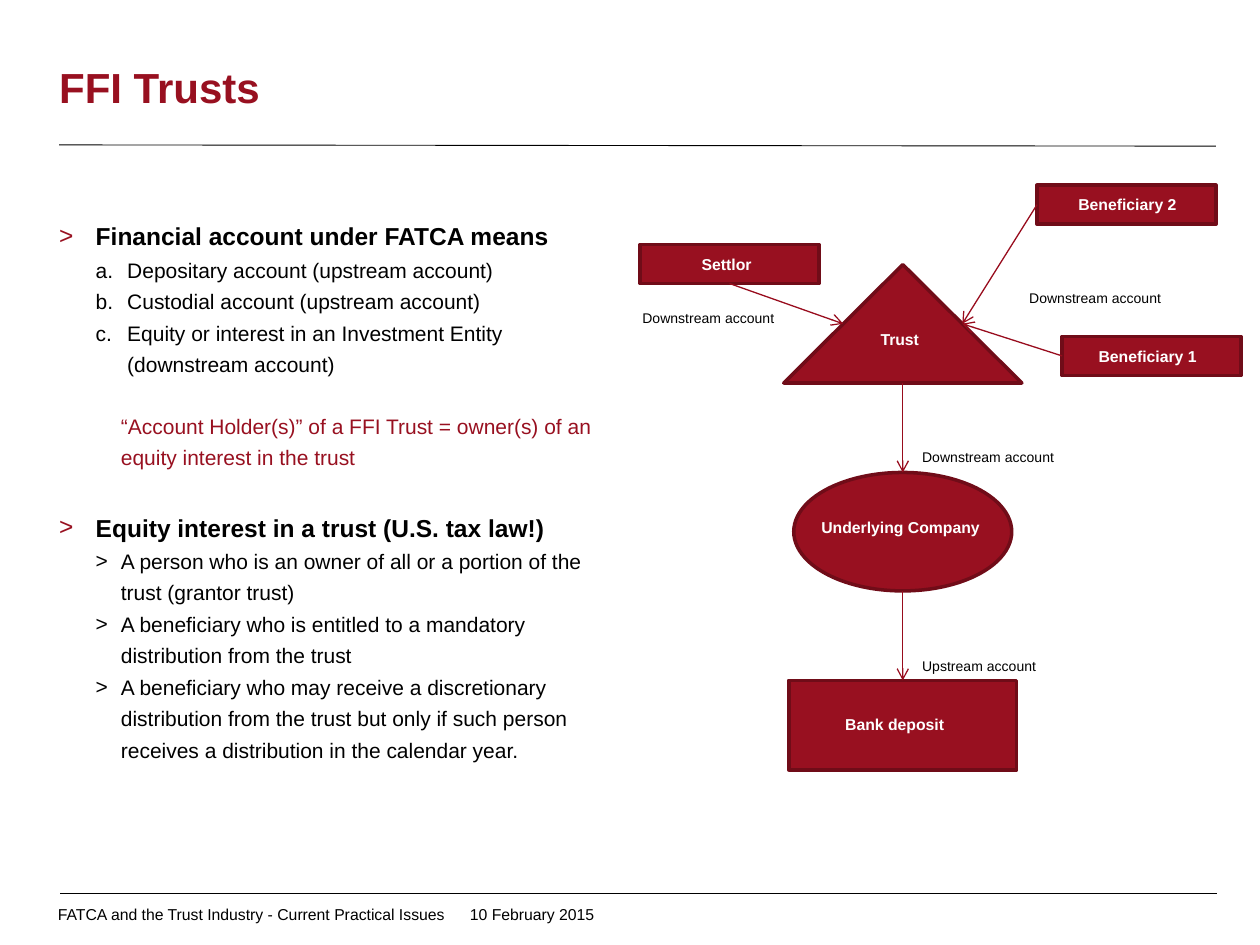
from dataclasses import dataclass

from lxml import etree
from pptx import Presentation
from pptx.dml.color import RGBColor
from pptx.enum import shapes, text
from pptx.oxml import ns
from pptx.util import Inches, Pt


@dataclass(frozen=True)
class Theme:
    font: str = "Arial"
    red: str = "981020"
    dark_red: str = "700C18"
    arrow_red: str = "980C1D"
    black: str = "000000"
    white: str = "FFFFFF"
    title: float = 24
    heading: float = 14
    body: float = 12
    small: float = 9
    label: float = 8
    line_spacing: float = 1.25


THEME = Theme()
SHAPE = shapes.MSO_SHAPE

# Body rows: style, text, space before in points
BODY = [
    ("heading", "Financial account under FATCA means", 0),
    ("letter", "Depositary account (upstream account)", 0),
    ("letter", "Custodial account (upstream account)", 0),
    ("letter", "Equity or interest in an Investment Entity (downstream account)", 0),
    ("note", "“Account Holder(s)” of a FFI Trust = owner(s) of an equity interest in the trust", 17.25),
    ("heading", "Equity interest in a trust (U.S. tax law!)", 20.1),
    ("item", "A person who is an owner of all or a portion of the trust (grantor trust)", 0),
    ("item", "A beneficiary who is entitled to a mandatory distribution from the trust", 0),
    ("item", "A beneficiary who may receive a discretionary distribution from the trust "
             "but only if such person receives a distribution in the calendar year.", 0),
]

# Style: size, colour, bold, left margin, hanging indent, bullet tag and attributes
CHARACTER = ("a:buChar", {"char": ">"})
LETTER = ("a:buAutoNum", {"type": "alphaLcPeriod"})
STYLES = {
    "heading": (THEME.heading, THEME.black, True, 0.29, 0.29, CHARACTER),
    "letter": (THEME.body, THEME.black, False, 0.54, 0.25, LETTER),
    "note": (THEME.body, THEME.red, False, 0.49, 0, None),
    "item": (THEME.body, THEME.black, False, 0.49, 0.2, CHARACTER),
}

# Nodes, relative to the diagram: preset, box, caption, caption box
NODES = {
    "company": (SHAPE.OVAL, (1.3, 2.28, 1.73, 0.94), "Underlying Company", (1.42, 2.59, 1.65)),
    "trust": (SHAPE.ISOSCELES_TRIANGLE, (1.22, 0.63, 1.89, 0.94), "Trust", (1.89, 1.1, 0.57)),
    "beneficiary 2": (SHAPE.RECTANGLE, (3.23, 0, 1.42, 0.31), "Beneficiary 2", (3.46, 0.03, 1.18)),
    "beneficiary 1": (SHAPE.RECTANGLE, (3.43, 1.2, 1.42, 0.31), "Beneficiary 1", (3.62, 1.23, 1.18)),
    "settlor": (SHAPE.RECTANGLE, (0.08, 0.47, 1.42, 0.31), "Settlor", (0.47, 0.5, 0.65)),
    "bank": (SHAPE.RECTANGLE, (1.26, 3.93, 1.81, 0.71), "Bank deposit", (1.61, 4.15, 1.14)),
}

# Arrow ends as a node and a point given in fractions of its box
BOTTOM, TOP, LEFT = (0.5, 1), (0.5, 0), (0, 0.5)
LEFT_SLOPE, RIGHT_SLOPE = (0.25, 0.5), (0.75, 0.5)
ARROWS = [
    ("beneficiary 1", LEFT, "trust", RIGHT_SLOPE),
    ("settlor", BOTTOM, "trust", LEFT_SLOPE),
    ("beneficiary 2", LEFT, "trust", RIGHT_SLOPE),
    ("trust", BOTTOM, "company", TOP),
    ("company", BOTTOM, "bank", TOP),
]

# Arrow labels, relative to the diagram: text, box
LABELS = [
    ("Upstream account", (2.22, 3.7, 1.32)),
    ("Downstream account", (2.22, 2.04, 1.32)),
    ("Downstream account", (3.07, 0.78, 1.73)),
    ("Downstream account", (0, 0.94, 1.73)),
]


def set_all(target, values):
    for name, value in values.items():
        setattr(target, name, value)


def set_font(paragraph, size, color, bold=False):
    set_all(paragraph.font, {"name": THEME.font, "size": Pt(size), "bold": bold})
    paragraph.font.color.rgb = RGBColor.from_string(color)


def add_text(slide, box, content, size, color, bold=False, **frame_format):
    frame = slide.shapes.add_textbox(*map(Inches, box)).text_frame
    set_all(frame, {"word_wrap": True, **frame_format})
    paragraph = frame.paragraphs[0]
    paragraph.text = content
    set_font(paragraph, size, color, bold)
    return frame


def add_line(slide, start, end, color, width, arrow=False):
    line = slide.shapes.add_connector(
        shapes.MSO_CONNECTOR.STRAIGHT, *map(Inches, (*start, *end)))
    line.line.color.rgb = RGBColor.from_string(color)
    line.line.width = Pt(width)
    if arrow:
        etree.SubElement(line.line._get_or_add_ln(), ns.qn("a:tailEnd"), type="arrow")
    etree.SubElement(line._element.spPr, ns.qn("a:effectLst"))


def add_bullet(paragraph, bullet, color):
    properties = paragraph._p.get_or_add_pPr()
    bullet_color = etree.SubElement(properties, ns.qn("a:buClr"))
    etree.SubElement(bullet_color, ns.qn("a:srgbClr"), val=color)
    etree.SubElement(properties, ns.qn("a:buFont"), typeface=THEME.font)
    tag, attributes = bullet
    etree.SubElement(properties, ns.qn(tag), attributes)


def build_header(slide, left, top, width, height):
    add_text(slide, (left, top, 6.74, height), "FFI Trusts", THEME.title, THEME.red, True,
             vertical_anchor=text.MSO_ANCHOR.MIDDLE,
             margin_left=0, margin_right=0, margin_top=0, margin_bottom=0)
    rule = top + height + 0.01
    add_line(slide, (left, rule), (left + width, rule + 0.01), THEME.black, 0.5)


def build_footer(slide, left, top, width, height):
    add_line(slide, (left, top), (left + width, top), THEME.black, 0.5)
    for content, offset, span in (
            ("FATCA and the Trust Industry - Current Practical Issues", -0.02, 3.13),
            ("10 February 2015", 3.25, 2.27)):
        add_text(slide, (left + offset, top + 0.04, span, height), content,
                 THEME.small, THEME.black, word_wrap=False, margin_left=0, margin_right=0,
                 vertical_anchor=text.MSO_ANCHOR.MIDDLE)


def build_body(slide, left, top, width, height):
    frame = slide.shapes.add_textbox(*map(Inches, (left, top, width, height))).text_frame
    set_all(frame, {"word_wrap": True, "margin_left": 0, "margin_right": 0,
                    "margin_top": 0, "margin_bottom": 0})
    for index, (style, content, space) in enumerate(BODY):
        size, color, bold, margin, hanging, bullet = STYLES[style]
        paragraph = frame.add_paragraph() if index else frame.paragraphs[0]
        paragraph.text = content
        properties = paragraph._p.get_or_add_pPr()
        properties.set("marL", str(Inches(margin)))
        properties.set("indent", str(-Inches(hanging)))
        if bullet:
            add_bullet(paragraph, bullet, THEME.red if style == "heading" else color)
        set_all(paragraph, {"level": int(style != "heading"),
                            "line_spacing": THEME.line_spacing, "space_before": Pt(space)})
        set_font(paragraph, size, color, bold)


def build_diagram(slide, left, top):
    def place(box):
        return (left + box[0], top + box[1], *box[2:])

    def point(node, fraction):
        x, y, width, height = place(NODES[node][1])
        return x + width * fraction[0], y + height * fraction[1]

    # Nodes
    for preset, box, _, _ in NODES.values():
        shape = slide.shapes.add_shape(preset, *map(Inches, place(box)))
        shape.shadow.inherit = False
        shape.fill.solid()
        shape.fill.fore_color.rgb = RGBColor.from_string(THEME.red)
        shape.line.color.rgb = RGBColor.from_string(THEME.dark_red)
        shape.line.width = Pt(2)

    # Arrows
    for source, source_point, target, target_point in ARROWS:
        add_line(slide, point(source, source_point), point(target, target_point),
                 THEME.arrow_red, 0.75, arrow=True)

    # Arrow labels and node captions
    for content, box in LABELS:
        add_text(slide, (*place(box), 0.24), content, THEME.label, THEME.black)
    for _, _, caption, box in NODES.values():
        add_text(slide, (*place(box), 0.25), caption, THEME.small, THEME.white, True)


def main():
    presentation = Presentation()
    set_all(presentation, {"slide_width": Inches(10), "slide_height": Inches(7.5)})
    slide = presentation.slides.add_slide(presentation.slide_layouts[6])
    build_header(slide, 0.47, 0.23, 9.18, 0.91)
    build_body(slide, 0.47, 1.7, 4.37, 4.96)
    build_diagram(slide, 5, 1.47)
    build_footer(slide, 0.48, 7.09, 9.18, 0.25)
    presentation.save("out.pptx")


if __name__ == "__main__":
    main()
